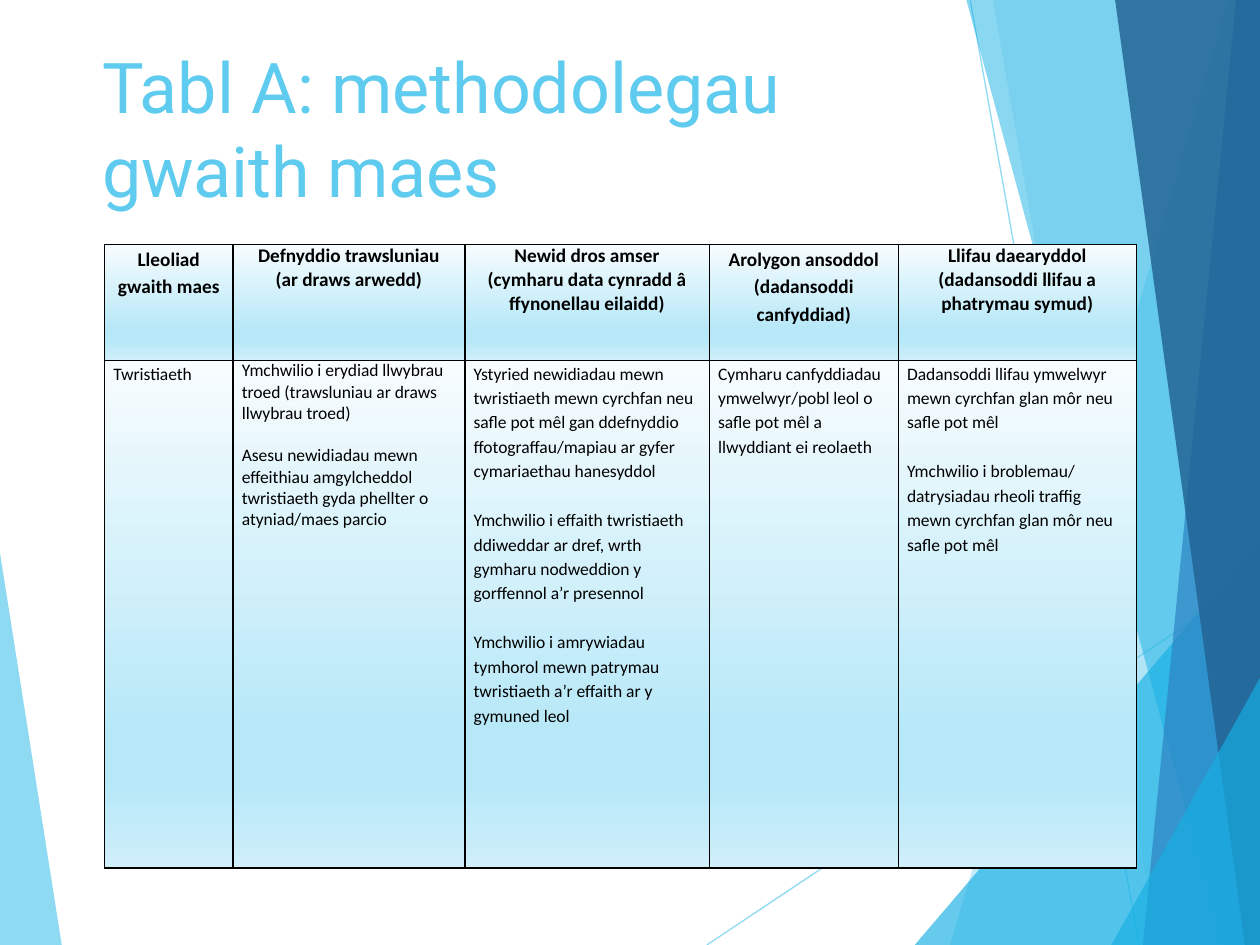
import pptx
import pptx.dml.color
import pptx.enum.text
import pptx.oxml
import pptx.oxml.ns
import pptx.util
from lxml import etree

Inches = pptx.util.Inches
Pt = pptx.util.Pt
ALIGN = pptx.enum.text.PP_ALIGN

TITLE = "Tabl A: methodolegau gwaith maes"
SKY, CYAN, BLUE, NAVY, BLACK = "5FCBEF", "17B0E4", "2E83C3", "226292", "000000"
FACETS = [
    ([(0, 4.39), (0.49, 7.5), (0, 7.5)], SKY, 70),
    ([(9.75, 0), (7.54, 7.5), (10, 7.5), (10, 0)], SKY, 36),
    ([(7.88, 0), (9.19, 7.5), (10, 7.5), (10, 0)], SKY, 20),
    ([(7.26, 7.5), (10, 4.29), (10, 7.5)], CYAN, 66),
    ([(7.67, 0), (9.7, 7.5), (10, 7.5), (10, 0)], CYAN, 50),
    ([(9.81, 0), (9.07, 7.5), (10, 7.5), (10, 0)], BLUE, 70),
    ([(8.85, 0), (9.88, 7.5), (10, 7.5), (10, 0)], NAVY, 82),
    ([(8.82, 7.5), (10, 5.38), (10, 7.5)], CYAN, 66),
]
RAYS = [((5.61, 7.5), (10, 4.57)), ((7.7, 0), (9.04, 7.5))]

COLUMNS = [1.02, 1.84, 1.94, 1.5, 1.89]
ROWS = [0.92, 4.03]
GRADIENT = [(0, "F7FCFE"), (74, "B7E8F8"), (83, "B7E8F8"), (100, "CFEFFA")]
HEADERS = [
    (1.15, ["Lleoliad gwaith maes"]),
    (1, ["Defnyddio trawsluniau", "(ar draws arwedd)"]),
    (1, ["Newid dros amser", "(cymharu data cynradd â ffynonellau eilaidd)"]),
    (1.15, ["Arolygon ansoddol (dadansoddi canfyddiad)"]),
    (1, ["Llifau daearyddol", "(dadansoddi llifau a phatrymau symud)"]),
]
BODY = [
    (1.15, ["Twristiaeth"]),
    (1, ["Ymchwilio i erydiad llwybrau troed (trawsluniau ar draws llwybrau troed)",
         "Asesu newidiadau mewn effeithiau amgylcheddol twristiaeth gyda phellter o "
         "atyniad/maes parcio"]),
    (1.15, ["Ystyried newidiadau mewn twristiaeth mewn cyrchfan neu safle pot mêl gan "
            "ddefnyddio ffotograffau/mapiau ar gyfer cymariaethau hanesyddol",
            "Ymchwilio i effaith twristiaeth ddiweddar ar dref, wrth gymharu nodweddion "
            "y gorffennol a’r presennol",
            "Ymchwilio i amrywiadau tymhorol mewn patrymau twristiaeth a’r effaith ar y "
            "gymuned leol"]),
    (1.15, ["Cymharu canfyddiadau ymwelwyr/pobl leol o safle pot mêl a llwyddiant ei reolaeth"]),
    (1.15, ["Dadansoddi llifau ymwelwyr mewn cyrchfan glan môr neu safle pot mêl",
            "Ymchwilio i broblemau/ datrysiadau rheoli traffig mewn cyrchfan glan môr neu "
            "safle pot mêl"]),
]


def paint(color, value):
    color.rgb = pptx.dml.color.RGBColor.from_string(value)


def fade(properties, percent):
    color = properties.find(".//" + pptx.oxml.ns.qn("a:srgbClr"))
    etree.SubElement(color, pptx.oxml.ns.qn("a:alpha"), val=str(percent * 1000))


def add_facet(page, points, color, opacity):
    corners = [(Inches(x), Inches(y)) for x, y in points]
    builder = page.shapes.build_freeform(*corners[0], scale=1.0)
    builder.add_line_segments(corners[1:], close=True)
    facet = builder.convert_to_shape()
    facet.shadow.inherit = False
    facet.fill.solid()
    paint(facet.fill.fore_color, color)
    fade(facet._element.spPr, opacity)
    facet.line.fill.background()


def add_ray(page, start, end):
    ray = page.shapes.add_connector(1, *[Inches(value) for value in start + end])
    paint(ray.line.color, SKY)
    ray.line.width = Pt(0.75)
    properties = ray._element.spPr
    fade(properties, 70)
    etree.SubElement(properties, pptx.oxml.ns.qn("a:effectLst"))


def add_run(para, text, size, font, color, bold=False):
    span = para.add_run()
    span.text = text
    span.font.size = Pt(size)
    span.font.name = font
    span.font.bold = bold
    paint(span.font.color, color)


def style_cell(cell):
    properties = cell._tc.get_or_add_tcPr()
    namespace = pptx.oxml.ns.nsdecls("a")
    for side in "LRTB":
        properties.append(pptx.oxml.parse_xml(
            f'<a:ln{side} {namespace} w="12700"><a:solidFill><a:srgbClr val="{BLACK}"/>'
            f'</a:solidFill></a:ln{side}>'))
    stops = "".join(f'<a:gs pos="{place * 1000}"><a:srgbClr val="{color}"/></a:gs>'
                    for place, color in GRADIENT)
    properties.append(pptx.oxml.parse_xml(
        f'<a:gradFill {namespace}><a:gsLst>{stops}</a:gsLst>'
        '<a:lin ang="5400000" scaled="0"/></a:gradFill>'))


def fill_cell(cell, spacing, texts, header):
    cell.margin_left = cell.margin_right = Inches(0.06 if header else 0.07)
    cell.margin_top = cell.margin_bottom = 0
    style_cell(cell)
    frame = cell.text_frame
    for index, text in enumerate(texts):
        para = frame.add_paragraph() if index else frame.paragraphs[0]
        para.alignment = ALIGN.CENTER if header else ALIGN.LEFT
        para.line_spacing = float(spacing)
        if index and not header:
            para.space_before = Pt(12.2 * spacing)
        add_run(para, text, 11 if header else 10, "Calibri", BLACK, header)


def add_methods(page):
    frame = page.shapes.add_table(len(ROWS), len(COLUMNS), Inches(0.83), Inches(1.94),
                                  Inches(sum(COLUMNS)), Inches(sum(ROWS)))
    table = frame.table
    table.first_row = table.horz_banding = False
    for column, width in zip(table.columns, COLUMNS):
        column.width = Inches(width)
    for row, height, contents in zip(table.rows, ROWS, (HEADERS, BODY)):
        row.height = Inches(height)
        for cell, (spacing, texts) in zip(row.cells, contents):
            fill_cell(cell, spacing, texts, contents is HEADERS)


def main():
    deck = pptx.Presentation()
    deck.slide_width, deck.slide_height = Inches(10), Inches(7.5)
    page = deck.slides.add_slide(deck.slide_layouts[5])
    add_facet(page, *FACETS[0])
    for start, end in RAYS:
        add_ray(page, start, end)
    for facet in FACETS[1:]:
        add_facet(page, *facet)

    box = page.shapes.title
    box.left, box.top = Inches(0.71), Inches(0.29)
    box.width, box.height = Inches(6.94), Inches(1.44)
    box.text_frame.word_wrap = True
    box.text_frame.vertical_anchor = pptx.enum.text.MSO_ANCHOR.MIDDLE
    para = box.text_frame.paragraphs[0]
    para.alignment = ALIGN.LEFT
    add_run(para, TITLE, 40, "Roboto", SKY)

    add_methods(page)
    deck.save("out.pptx")


if __name__ == "__main__":
    main()
